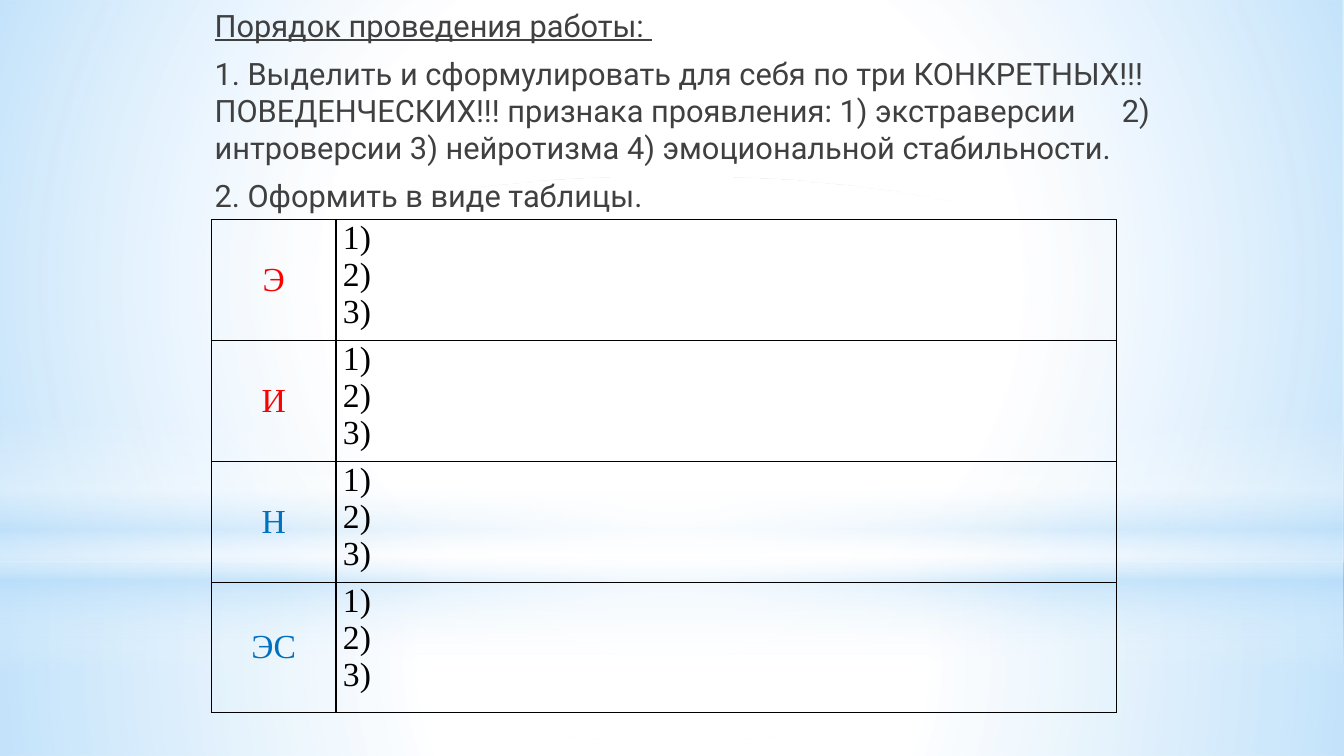
from dataclasses import dataclass

from pptx import Presentation
from pptx.dml.color import RGBColor
from pptx.enum.shapes import MSO_SHAPE
from pptx.enum.text import MSO_ANCHOR, MSO_AUTO_SIZE, PP_ALIGN
from pptx.oxml import parse_xml
from pptx.oxml.ns import nsdecls, qn
from pptx.util import Pt

RECTANGLE, OVAL = MSO_SHAPE.RECTANGLE, MSO_SHAPE.OVAL
TOP, MIDDLE = MSO_ANCHOR.TOP, MSO_ANCHOR.MIDDLE
LEFT, CENTER = PP_ALIGN.LEFT, PP_ALIGN.CENTER
NO_AUTOFIT = MSO_AUTO_SIZE.NONE


@dataclass(frozen=True)
class Theme:
    """Colours, fonts and type sizes of the slide."""
    white: str = "FFFFFF"
    sky: str = "B4DCFA"
    text: str = "404040"
    black: str = "000000"
    red: str = "FF0000"
    blue: str = "0070C0"
    body_font: str = "Roboto"
    table_font: str = "Times New Roman"
    body_size: int = 22
    table_size: int = 24


THEME = Theme()
WIDTH, HEIGHT = 960, 540
CIRCLE = ('<a:path path="circle"><a:fillToRect l="50000" t="50000" '
          'r="50000" b="50000"/></a:path>')
VERTICAL = '<a:lin ang="5400000" scaled="0"/>'
STEPS = [
    "Порядок проведения работы: ",
    "1. Выделить и сформулировать для себя по три КОНКРЕТНЫХ!!! "
    "ПОВЕДЕНЧЕСКИХ!!! признака проявления: 1) экстраверсии\t2) "
    "интроверсии 3) нейротизма 4) эмоциональной стабильности.",
    "2. Оформить в виде таблицы.",
]
TRAITS = [("Э", THEME.red), ("И", THEME.red), ("Н", THEME.blue), ("ЭC", THEME.blue)]
SIGNS = ["1)", "2)", "3)"]


def add_span(para, text, font, size, color):
    """Add one formatted run to a paragraph and return it."""
    span = para.add_run()
    span.text = text
    span.font.name = font
    span.font.size = Pt(size)
    span.font.color.rgb = RGBColor.from_string(color)
    return span


def add_glow(page, kind, box, stops, direction):
    """Add a borderless shape with a translucent gradient."""
    shape = page.shapes.add_shape(kind, *map(Pt, box))
    shape.shadow.inherit = False
    shape.line.fill.background()
    shape.fill.background()
    marks = "".join(
        f'<a:gs pos="{position * 1000}"><a:srgbClr val="{color}">'
        f'<a:alpha val="{alpha * 1000}"/></a:srgbClr></a:gs>'
        for position, color, alpha in stops)
    gradient = parse_xml(
        f'<a:gradFill {nsdecls("a")} rotWithShape="1">'
        f'<a:gsLst>{marks}</a:gsLst>{direction}</a:gradFill>')
    properties = shape._element.spPr
    properties.replace(properties.find(qn("a:noFill")), gradient)


def add_backdrop(page, box):
    """Lay the sky, floor, horizon and central glow over the box."""
    left, top, width, height = box
    white, sky = THEME.white, THEME.sky
    horizon = 402
    add_glow(page, RECTANGLE, (left, top + horizon, width, height - horizon),
             [(0, white, 91), (37, white, 76), (100, sky, 79)], CIRCLE)
    add_glow(page, RECTANGLE, (left, top, width, horizon),
             [(0, white, 89), (48, white, 62), (100, sky, 79)], CIRCLE)
    add_glow(page, RECTANGLE, (left, top + 297, width, 180),
             [(0, white, 0), (29, white, 30), (45, sky, 40),
              (55, white, 26), (65, sky, 60), (100, white, 0)], VERTICAL)
    add_glow(page, OVAL, (left, top + 126, width, horizon),
             [(0, white, 100), (56, white, 0)], CIRCLE)


def fill_steps(body, box):
    """Place the body placeholder in the box and write the steps."""
    body.left, body.top, body.width, body.height = map(Pt, box)
    frame = body.text_frame
    frame.word_wrap = True
    frame.auto_size = NO_AUTOFIT
    frame.vertical_anchor = TOP
    frame.margin_left = frame.margin_right = Pt(7.2)
    frame.margin_top = Pt(4.5)
    for index, step in enumerate(STEPS):
        para = frame.paragraphs[0] if index == 0 else frame.add_paragraph()
        properties = para._p.get_or_add_pPr()
        properties.set("marL", str(Pt(3.6)))
        properties.set("indent", "0")
        properties.append(parse_xml(f'<a:buNone {nsdecls("a")}/>'))
        if "\t" in step:
            properties.append(parse_xml(
                f'<a:tabLst {nsdecls("a")}><a:tab pos="{Pt(654)}" algn="l"/></a:tabLst>'))
        para.alignment = LEFT
        para.space_before = Pt(5 if index else 0)
        para.space_after = Pt(3)
        span = add_span(para, step, THEME.body_font, THEME.body_size, THEME.text)
        span.font.underline = index == 0


def add_borders(cell):
    """Draw a thin black line on every side of a cell."""
    properties = cell._tc.get_or_add_tcPr()
    for index, side in enumerate(("lnL", "lnR", "lnT", "lnB")):
        properties.insert(index, parse_xml(
            f'<a:{side} {nsdecls("a")} w="{Pt(1)}"><a:solidFill>'
            f'<a:srgbClr val="{THEME.black}"/></a:solidFill></a:{side}>'))


def fill_cell(cell, lines, color, alignment, anchor):
    """Write lines into a clear, bordered cell."""
    cell.fill.background()
    add_borders(cell)
    cell.margin_left = cell.margin_right = Pt(5)
    cell.margin_top = cell.margin_bottom = 0
    cell.vertical_anchor = anchor
    for index, line in enumerate(lines):
        frame = cell.text_frame
        para = frame.paragraphs[0] if index == 0 else frame.add_paragraph()
        para.alignment = alignment
        add_span(para, line, THEME.table_font, THEME.table_size, color)


def add_traits(page, box):
    """Add the table of traits and their signs inside the box."""
    left, top, width, height = box
    label_width, row_height = 89, 86.4
    table = page.shapes.add_table(len(TRAITS), 2, *map(Pt, box)).table
    table.first_row = table.horz_banding = False
    table.columns[0].width = Pt(label_width)
    table.columns[1].width = Pt(width - label_width)
    last = len(TRAITS) - 1
    for index, (trait, color) in enumerate(TRAITS):
        table.rows[index].height = Pt(
            row_height if index < last else height - last * row_height)
        fill_cell(table.cell(index, 0), [trait], color, CENTER, MIDDLE)
        fill_cell(table.cell(index, 1), SIGNS, THEME.black, LEFT, TOP)


def build_page(deck, box):
    """Build the assignment slide inside the box."""
    left, top, width, height = box
    page = deck.slides.add_slide(deck.slide_layouts[1])
    title = page.shapes.title._element
    title.getparent().remove(title)
    body = page.placeholders[1]
    add_backdrop(page, box)
    page.shapes._spTree.append(body._element)
    fill_steps(body, (left + 142.5, top, 698, height))
    add_traits(page, (left + 151, top + 156.8, 646.5, 352))


def main():
    """Create and save the deck."""
    deck = Presentation()
    deck.slide_width, deck.slide_height = Pt(WIDTH), Pt(HEIGHT)
    build_page(deck, (0, 0, WIDTH, HEIGHT))
    deck.save("out.pptx")


if __name__ == "__main__":
    main()
